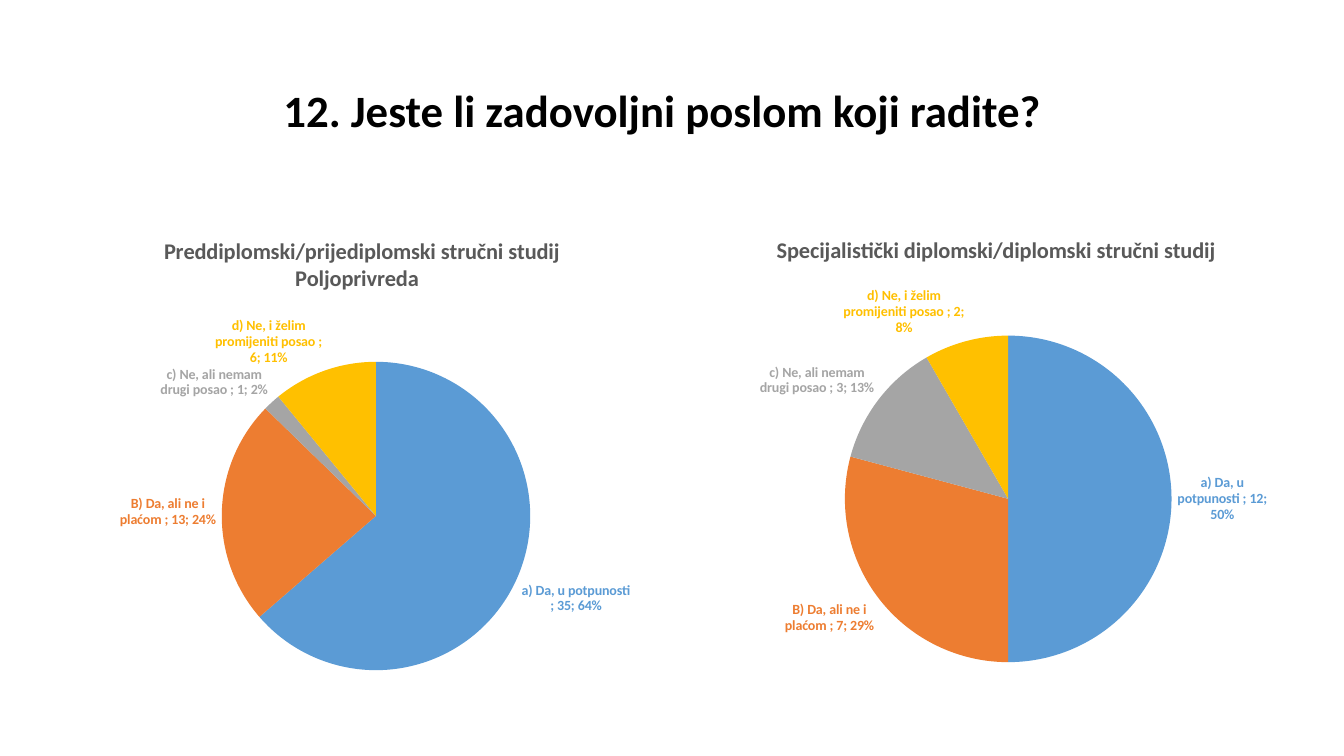
import pptx
import pptx.chart.data
import pptx.dml.color
import pptx.enum.chart
import pptx.enum.text
import pptx.util
from lxml import etree
from pptx.util import Inches


def color(value):
    return pptx.dml.color.RGBColor.from_string(value)


def add_chart_element(parent, tag, value):
    """Append a c: element holding value as its val attribute."""
    namespace = parent.nsmap["c"]
    element = etree.SubElement(parent, f"{{{namespace}}}{tag}")
    element.set("val", str(value))


ANSWERS = {
    "a) Da, u potpunosti ": "5B9BD5",
    "B) Da, ali ne i plaćom ": "ED7D31",
    "c) Ne, ali nemam drugi posao ": "A5A5A5",
    "d) Ne, i želim promijeniti posao ": "FFC000",
}
# Frames are left, top, width, height; pies are center x, center y, radius
STUDIES = [
    {
        "title": " Preddiplomski/prijediplomski stručni studij Poljoprivreda ",
        "values": (35, 13, 1, 6),
        "frame": (0.63, 2.15, 5.87, 4.66),
        "pie": (3.73, 5.12, 1.53),
    },
    {
        "title": " Specijalistički diplomski/diplomski stručni studij ",
        "values": (12, 7, 3, 2),
        "frame": (6.84, 2.15, 6.08, 4.58),
        "pie": (10, 4.95, 1.62),
    },
]
LABEL_FLAGS = {"showCatName": 1, "showVal": 1, "showPercent": 1}

presentation = pptx.Presentation()
presentation.slide_width = Inches(13.33)
presentation.slide_height = Inches(7.5)
slide = presentation.slides.add_slide(presentation.slide_layouts[5])

title = slide.shapes.title
title.left, title.top = Inches(0.92), Inches(0.4)
title.width, title.height = Inches(11.5), Inches(1.45)
title.text_frame.text = "12. Jeste li zadovoljni poslom koji radite?  "
title.text_frame.vertical_anchor = pptx.enum.text.MSO_ANCHOR.MIDDLE
paragraph = title.text_frame.paragraphs[0]
paragraph.alignment = pptx.enum.text.PP_ALIGN.CENTER
paragraph.line_spacing = 0.9
title_format = {"name": "Calibri", "size": pptx.util.Pt(32), "bold": True}
for name, value in title_format.items():
    setattr(paragraph.runs[0].font, name, value)
paragraph.runs[0].font.color.rgb = color("000000")

for study in STUDIES:
    data = pptx.chart.data.CategoryChartData()
    data.categories = list(ANSWERS)
    data.add_series("Series 1", study["values"])
    left, top, width, height = study["frame"]
    chart = slide.shapes.add_chart(
        pptx.enum.chart.XL_CHART_TYPE.PIE,
        *(Inches(length) for length in study["frame"]), data,
    ).chart
    chart.has_legend = False
    chart.font.name = "Calibri"
    chart.font.size = pptx.util.Pt(10)
    chart.font.color.rgb = color("000000")

    chart.has_title = True
    chart.chart_title.include_in_layout = False
    chart.chart_title.text_frame.text = study["title"]
    chart_title_font = chart.chart_title.text_frame.paragraphs[0].runs[0].font
    chart_title_format = {"name": "Calibri", "size": pptx.util.Pt(16), "bold": True}
    for name, value in chart_title_format.items():
        setattr(chart_title_font, name, value)
    chart_title_font.color.rgb = color("595959")

    plot = chart.plots[0]
    plot.vary_by_categories = True
    for index, answer_color in enumerate(ANSWERS.values()):
        point = plot.series[0].points[index]
        point.format.fill.solid()
        point.format.fill.fore_color.rgb = color(answer_color)
        label = point.data_label
        label_format = {"name": "Calibri", "size": pptx.util.Pt(10), "bold": True}
        for name, value in label_format.items():
            setattr(label.font, name, value)
        label.font.color.rgb = color(answer_color)
        label.position = pptx.enum.chart.XL_LABEL_POSITION.OUTSIDE_END

    # Label contents and the plot layout are only reachable through XML
    for label_element in chart.element.xpath(".//c:dLbl"):
        for flag, shown in LABEL_FLAGS.items():
            label_element.xpath(f"c:{flag}")[0].set("val", str(shown))
        namespace = label_element.nsmap["c"]
        separator = etree.SubElement(label_element, f"{{{namespace}}}separator")
        separator.text = "; "

    plot_area = chart.element.xpath(".//c:plotArea")[0]
    for old_layout in plot_area.xpath("c:layout"):
        plot_area.remove(old_layout)
    namespace = plot_area.nsmap["c"]
    layout = etree.Element(f"{{{namespace}}}layout", nsmap=plot_area.nsmap)
    plot_area.insert(0, layout)
    manual = etree.SubElement(layout, f"{{{namespace}}}manualLayout")
    center_x, center_y, radius = study["pie"]
    layout_values = {
        "layoutTarget": "inner",
        "xMode": "edge",
        "yMode": "edge",
        "x": (center_x - radius - left) / width,
        "y": (center_y - radius - top) / height,
        "w": 2 * radius / width,
        "h": 2 * radius / height,
    }
    for tag, value in layout_values.items():
        add_chart_element(manual, tag, value)

presentation.save("out.pptx")
